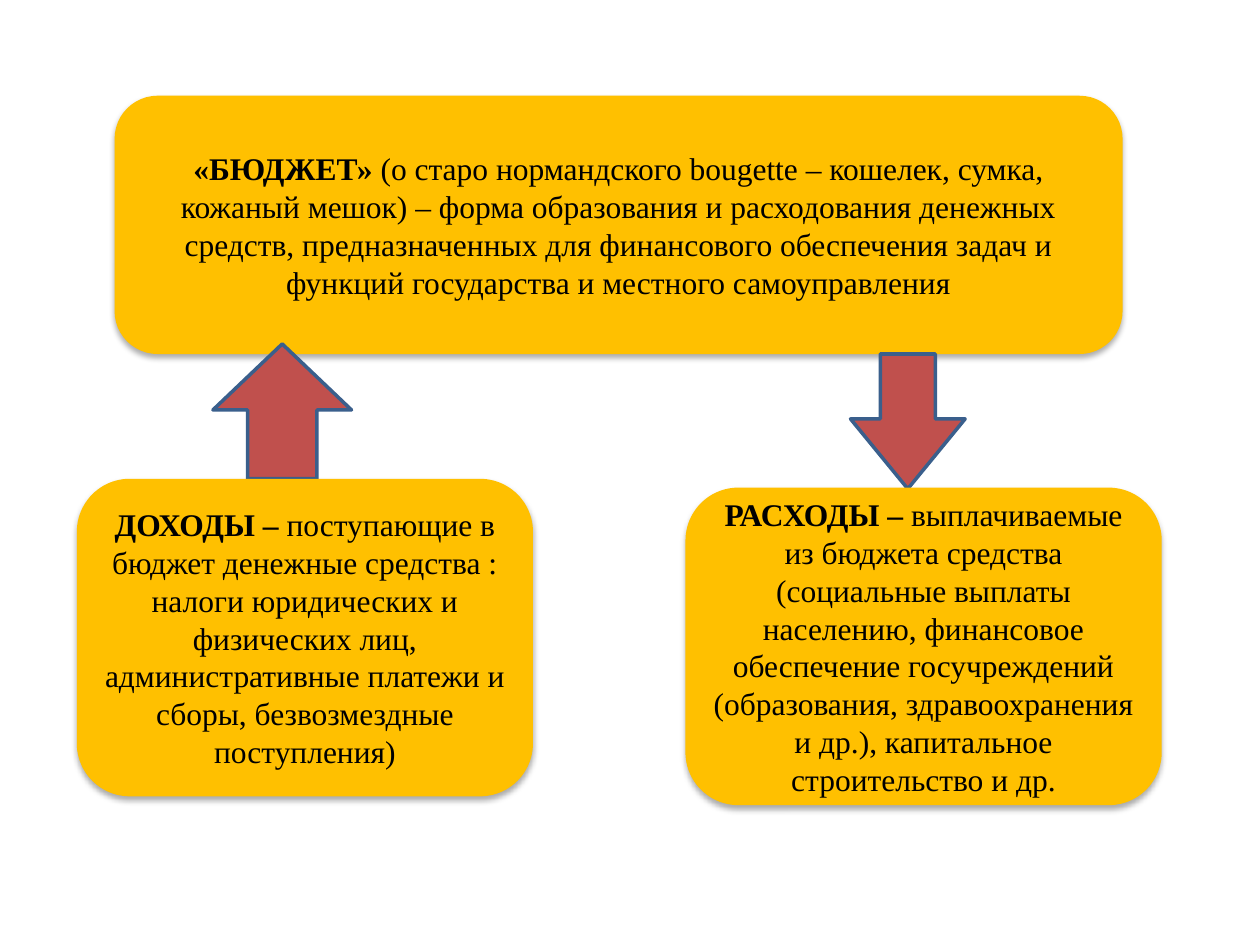
from lxml.etree import SubElement
from pptx import Presentation
from pptx.dml.color import RGBColor
from pptx.enum.shapes import MSO_SHAPE
from pptx.enum.text import MSO_ANCHOR, PP_ALIGN
from pptx.oxml.ns import qn
from pptx.util import Inches, Pt

AMBER = RGBColor(0xFF, 0xC0, 0x00)
RED = RGBColor(0xC0, 0x50, 0x4D)
BLUE = RGBColor(0x3A, 0x5F, 0x8C)
BLACK = RGBColor(0, 0, 0)

ARROWS = [
    (MSO_SHAPE.UP_ARROW, (1.69, 2.73, 1.1, 1.07), (0.5, 0.49)),
    (MSO_SHAPE.DOWN_ARROW, (6.75, 2.81, 0.91, 1.07), (0.48, 0.61)),
]
BUDGET = (
    (0.91, 0.76, 8, 2.05),
    "«БЮДЖЕТ» ",
    "(о старо нормандского bougette – кошелек, сумка, кожаный мешок) – форма "
    "образования и расходования денежных средств, предназначенных для финансового "
    "обеспечения задач и функций государства и местного самоуправления",
)
FLOWS = [
    (
        (0.61, 3.8, 3.62, 2.52),
        "ДОХОДЫ – ",
        "поступающие в бюджет денежные средства : налоги юридических и физических лиц, "
        "административные платежи и сборы, безвозмездные поступления)",
    ),
    (
        (5.44, 3.87, 3.78, 2.52),
        "РАСХОДЫ – ",
        "выплачиваемые из бюджета средства (социальные выплаты населению, финансовое "
        "обеспечение госучреждений (образования, здравоохранения и др.), капитальное "
        "строительство и др.",
    ),
]
TEXT_FORMAT = {"name": "Times New Roman", "size": Pt(18)}
SHADOW = {"blurRad": Pt(3.5), "dist": Pt(2.2), "dir": 90 * 60000, "rotWithShape": 0}


def add_filled(page, kind, place, color):
    shape = page.shapes.add_shape(kind, *map(Inches, place))
    shape.shadow.inherit = False
    shape.fill.solid()
    shape.fill.fore_color.rgb = color
    return shape


def add_shadow(shape):
    effects = shape.element.spPr.find(qn("a:effectLst"))
    shadow = SubElement(effects, qn("a:outerShdw"))
    for name, value in SHADOW.items():
        shadow.set(name, str(value))
    color = SubElement(shadow, qn("a:srgbClr"), val="000000")
    SubElement(color, qn("a:alpha"), val="32000")


def add_definition(page, place, term, meaning):
    box = add_filled(page, MSO_SHAPE.ROUNDED_RECTANGLE, place, AMBER)
    box.line.fill.background()
    add_shadow(box)
    frame = box.text_frame
    frame.word_wrap = True
    frame.vertical_anchor = MSO_ANCHOR.MIDDLE
    para = frame.paragraphs[0]
    para.alignment = PP_ALIGN.CENTER
    for text, bold in ((term, True), (meaning, False)):
        span = para.add_run()
        span.text = text
        for name, value in {**TEXT_FORMAT, "bold": bold}.items():
            setattr(span.font, name, value)
        span.font.color.rgb = BLACK


def add_arrow(page, kind, place, proportions):
    arrow = add_filled(page, kind, place, RED)
    arrow.line.color.rgb = BLUE
    arrow.line.width = Pt(2)
    for index, value in enumerate(proportions):
        arrow.adjustments[index] = value


def main():
    deck = Presentation()
    deck.slide_width, deck.slide_height = Inches(10), Inches(7.5)
    page = deck.slides.add_slide(deck.slide_layouts[6])
    add_definition(page, *BUDGET)
    for arrow in ARROWS:
        add_arrow(page, *arrow)
    for flow in FLOWS:
        add_definition(page, *flow)
    deck.save("out.pptx")


if __name__ == "__main__":
    main()
